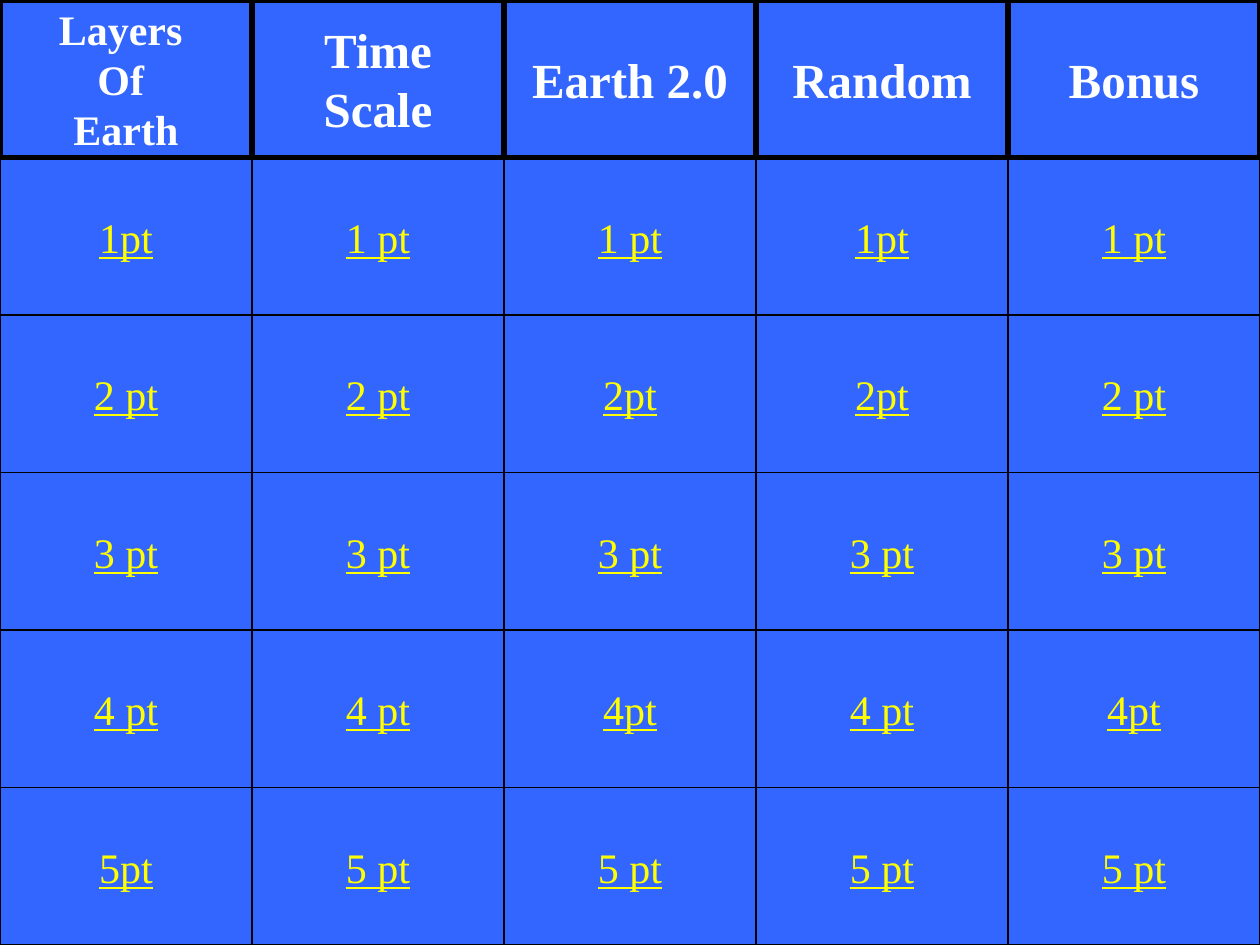
from pptx import Presentation
from pptx import util as u
from pptx.dml.color import RGBColor
from pptx.enum import shapes, text

PX = 9525
WIDTH, HEIGHT = 960, 720
FONT = "Times New Roman"
BLUE, BLACK, WHITE, YELLOW = "3366FF", "000000", "FFFFFF", "FFFF00"

CATEGORIES = [
    (["Layers ", "Of ", "Earth"], 24),
    (["Time", "Scale"], 28),
    (["Earth 2.0"], 28),
    (["Random"], 28),
    (["Bonus"], 28),
]
POINTS = [
    ["1pt", "1 pt", "1 pt", "1pt", "1 pt"],
    ["2 pt", "2 pt", "2pt", "2pt", "2 pt"],
    ["3 pt", "3 pt", "3 pt", "3 pt", "3 pt"],
    ["4 pt", "4 pt", "4pt", "4 pt", "4pt"],
    ["5pt", "5 pt", "5 pt", "5 pt", "5 pt"],
]


def paint(color, value):
    """Set a colour format from a hex string."""
    color.rgb = RGBColor.from_string(value)


def add_tile(s, kind, box, line_width, lines, size, color, bold=False, underline=False):
    """Add one outlined blue tile with centred lines of text."""
    sp = s.shapes.add_shape(kind, *(u.Emu(v * PX) for v in box))
    sp.shadow.inherit = False
    sp.fill.solid()
    paint(sp.fill.fore_color, BLUE)
    paint(sp.line.color, BLACK)
    sp.line.width = u.Pt(line_width)
    tf = sp.text_frame
    tf.word_wrap = False
    tf.vertical_anchor = text.MSO_ANCHOR.MIDDLE
    for i, line in enumerate(lines):
        p = tf.add_paragraph() if i else tf.paragraphs[0]
        p.alignment = text.PP_ALIGN.CENTER
        r = p.add_run()
        r.text = line
        r.font.name = FONT
        r.font.size = u.Pt(size)
        r.font.bold = bold
        r.font.underline = underline
        paint(r.font.color, color)


def add_points(s, x, y, w, h):
    """Fill the box with the grid of point buttons."""
    cell_w, cell_h = w // len(POINTS[0]), h // len(POINTS)
    for row, labels in enumerate(POINTS):
        for col, label in enumerate(labels):
            box = (x + col * cell_w, y + row * cell_h, cell_w, cell_h)
            add_tile(s, shapes.MSO_SHAPE.ACTION_BUTTON_CUSTOM, box, 0.75,
                     [label], 24, YELLOW, underline=True)


def add_categories(s, x, y, w, h):
    """Fill the box with the row of category headings."""
    cell_w = w // len(CATEGORIES)
    for col, (lines, size) in enumerate(CATEGORIES):
        add_tile(s, shapes.MSO_SHAPE.RECTANGLE, (x + col * cell_w, y, cell_w, h), 3,
                 lines, size, WHITE, bold=True)


def main():
    """Build the quiz board and save it."""
    prs = Presentation()
    prs.slide_width, prs.slide_height = u.Emu(WIDTH * PX), u.Emu(HEIGHT * PX)
    s = prs.slides.add_slide(prs.slide_layouts[6])
    s.background.fill.solid()
    paint(s.background.fill.fore_color, "00CC99")
    header = HEIGHT // (len(POINTS) + 1)
    add_points(s, 0, header, WIDTH, HEIGHT - header)
    add_categories(s, 0, 0, WIDTH, header)
    prs.save("out.pptx")


if __name__ == "__main__":
    main()
